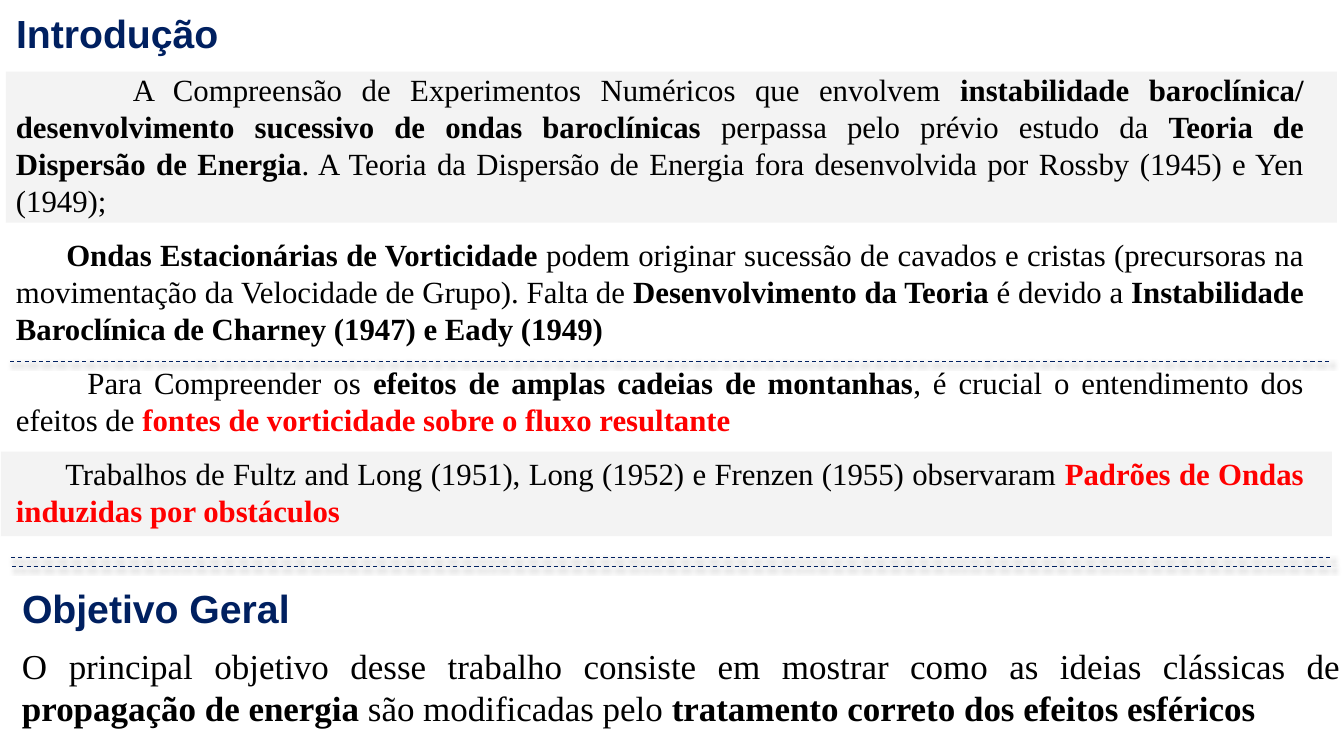
from lxml.etree import SubElement
from pptx import Presentation
from pptx.dml.color import RGBColor
from pptx.enum.dml import MSO_LINE
from pptx.enum.shapes import MSO_CONNECTOR, MSO_SHAPE
from pptx.enum.text import MSO_ANCHOR, MSO_AUTO_SIZE, PP_ALIGN
from pptx.oxml.ns import qn
from pptx.util import Inches, Pt

NAVY = RGBColor(0x00, 0x20, 0x60)
BLACK = RGBColor(0x00, 0x00, 0x00)
RED = RGBColor(0xFF, 0x00, 0x00)
PALE_GREY = RGBColor(0xF2, 0xF2, 0xF2)

HEADING = {"name": "Arial", "size": Pt(28), "bold": True}
BODY = {"name": "Times New Roman", "size": Pt(22), "bold": False}
BODY_BOLD = {**BODY, "bold": True}
GOAL = {**BODY, "size": Pt(25)}
GOAL_BOLD = {**GOAL, "bold": True}

INTRODUCTION = [
    (1.16, [
        ("A Compreensão de Experimentos Numéricos que envolvem ", BODY, BLACK),
        ("instabilidade baroclínica/ desenvolvimento sucessivo de ondas baroclínicas",
         BODY_BOLD, BLACK),
        (" perpassa pelo prévio estudo da ", BODY, BLACK),
        ("Teoria de Dispersão de Energia", BODY_BOLD, BLACK),
        (". A Teoria da Dispersão de Energia fora desenvolvida por "
         "Rossby (1945) e Yen (1949);", BODY, BLACK),
    ]),
    (0.5, [
        ("Ondas Estacionárias de Vorticidade ", BODY_BOLD, BLACK),
        ("podem originar sucessão de cavados e cristas (precursoras na "
         "movimentação da Velocidade de Grupo). Falta de ", BODY, BLACK),
        ("Desenvolvimento da Teoria ", BODY_BOLD, BLACK),
        ("é devido a ", BODY, BLACK),
        ("Instabilidade Baroclínica de Charney (1947) e Eady (1949)", BODY_BOLD, BLACK),
    ]),
    (0.71, [
        ("Para Compreender os ", BODY, BLACK),
        ("efeitos de amplas cadeias de montanhas", BODY_BOLD, BLACK),
        (", é crucial o entendimento dos efeitos de ", BODY, BLACK),
        ("fontes de vorticidade sobre o fluxo resultante", BODY_BOLD, RED),
    ]),
    (0.49, [
        ("Trabalhos de Fultz and Long (1951), Long (1952) e Frenzen (1955) observaram ",
         BODY, BLACK),
        ("Padrões de Ondas induzidas por obstáculos", BODY_BOLD, RED),
    ]),
]
OBJECTIVE = [
    (0, [
        ("O principal objetivo desse trabalho consiste em mostrar como as "
         "ideias clássicas de ", GOAL, BLACK),
        ("propagação de energia", GOAL_BOLD, BLACK),
        (" são modificadas pelo ", GOAL, BLACK),
        ("tratamento correto dos efeitos esféricos", GOAL_BOLD, BLACK),
    ]),
]


def heading(text):
    return [(0, [(text, HEADING, NAVY)])]


def write_text(sp, paragraphs):
    tf = sp.text_frame
    frame_format = {"word_wrap": True, "auto_size": MSO_AUTO_SIZE.NONE,
                    "vertical_anchor": MSO_ANCHOR.MIDDLE}
    for name, value in frame_format.items():
        setattr(tf, name, value)
    for i, (indent, runs) in enumerate(paragraphs):
        p = tf.add_paragraph() if i else tf.paragraphs[0]
        p.alignment = PP_ALIGN.JUSTIFY
        p.space_before = Pt(12.3 if i else 0)
        if indent:
            p._p.get_or_add_pPr().set("indent", str(Inches(indent)))
        for text, font_format, color in runs:
            r = p.add_run()
            r.text = text
            for name, value in font_format.items():
                setattr(r.font, name, value)
            r.font.color.rgb = color


def place_title(s, box, text):
    sp = s.shapes.title
    for name, value in zip(("left", "top", "width", "height"), box):
        setattr(sp, name, Inches(value))
    write_text(sp, heading(text))


def add_text(s, box, paragraphs):
    write_text(s.shapes.add_textbox(*map(Inches, box)), paragraphs)


def add_band(s, box):
    sp = s.shapes.add_shape(MSO_SHAPE.RECTANGLE, *map(Inches, box))
    sp.shadow.inherit = False
    sp.line.fill.background()
    sp.fill.solid()
    sp.fill.fore_color.rgb = PALE_GREY
    color = sp._element.spPr.find(qn("a:solidFill"))[0]
    SubElement(color, qn("a:alpha"), val="90000")


def add_divider(s, left, y):
    line = s.shapes.add_connector(
        MSO_CONNECTOR.STRAIGHT, *map(Inches, (left, y, left + 13.1, y)))
    line.line.color.rgb = NAVY
    line.line.width = Pt(0.75)
    line.line.dash_style = MSO_LINE.DASH
    effects = SubElement(line._element.spPr, qn("a:effectLst"))
    shadow = SubElement(effects, qn("a:outerShdw"), blurRad=str(Pt(4)),
                        dist=str(Pt(3)), dir=str(45 * 60000), algn="tl",
                        rotWithShape="0")
    color = SubElement(shadow, qn("a:srgbClr"), val=str(BLACK))
    SubElement(color, qn("a:alpha"), val="40000")


def main():
    prs = Presentation()
    prs.slide_width = Inches(13.33)
    prs.slide_height = Inches(7.5)
    s = prs.slides.add_slide(prs.slide_layouts[5])

    place_title(s, (0.06, -0.02, 3.12, 0.69), "Introdução")
    add_band(s, (0.01, 4.48, 13.2, 0.84))
    add_band(s, (0.06, 0.71, 13.2, 1.5))
    add_text(s, (0.06, 0.58, 12.97, 4.79), INTRODUCTION)
    add_text(s, (0.12, 6.12, 13.27, 1.38), OBJECTIVE)
    add_text(s, (0.12, 5.68, 3.12, 0.69), heading("Objetivo Geral"))
    for left, y in ((0.11, 5.53), (0.12, 5.62), (0.1, 3.59)):
        add_divider(s, left, y)

    prs.save("out.pptx")


if __name__ == "__main__":
    main()
